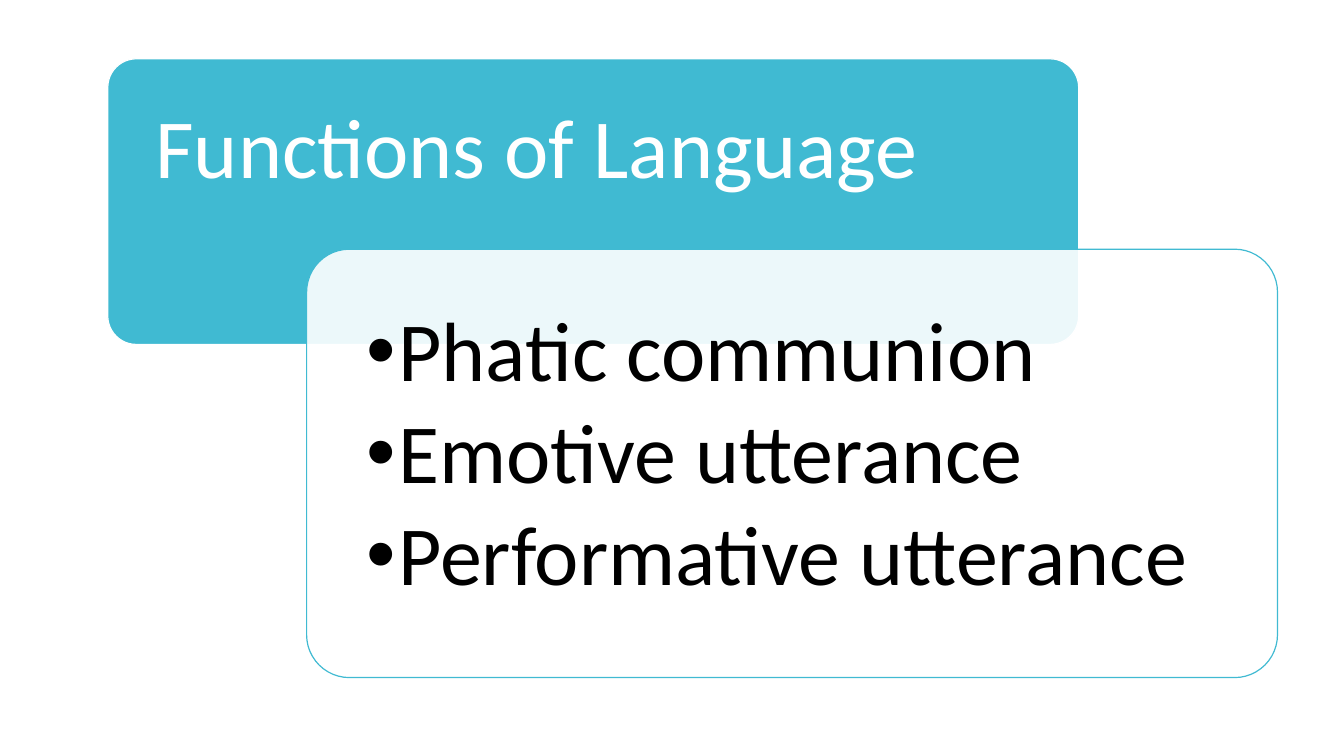
import pptx
import pptx.util
import pptx.dml.color
import pptx.enum.shapes
import pptx.enum.text
import pptx.oxml
import pptx.oxml.ns
import lxml.etree

Pt = pptx.util.Pt
RGBColor = pptx.dml.color.RGBColor
qn = pptx.oxml.ns.qn

TITLE = "Functions of Language"
FUNCTIONS = ["Phatic communion", "Emotive utterance", "Performative utterance"]

TEAL = RGBColor(0x40, 0xBA, 0xD2)
WHITE = RGBColor(0xFF, 0xFF, 0xFF)
BLACK = RGBColor(0, 0, 0)

CARD = (77, 42, 693.5, 204)
PANEL = (219, 178, 693.5, 306)
PANEL_PAD = 9
INSET = 34
TITLE_BOTTOM_INSET = 18
BULLET_INDENT = 22.5


def place(sp, left, top, width, height):
    sp.left, sp.top, sp.width, sp.height = Pt(left), Pt(top), Pt(width), Pt(height)


def add_card(s, box, fill, line, opacity=100):
    sp = s.shapes.add_shape(pptx.enum.shapes.MSO_SHAPE.ROUNDED_RECTANGLE, *map(Pt, box))
    sp.adjustments[0] = 0.1
    sp.shadow.inherit = False
    sp.fill.solid()
    sp.fill.fore_color.rgb = fill
    sp.line.color.rgb = line
    sp.line.width = Pt(0.85)
    if opacity < 100:
        color = sp.fill._xPr.find(qn("a:solidFill"))[0]
        lxml.etree.SubElement(color, qn("a:alpha")).set("val", str(opacity * 1000))


def write(p, text, color, size=60, font="Calibri", after=0, bullet=False):
    p.alignment = pptx.enum.text.PP_ALIGN.LEFT
    p.line_spacing = 0.9
    p.space_before = Pt(0)
    p.space_after = Pt(after)
    if bullet:
        pPr = p._p.get_or_add_pPr()
        pPr.set("marL", str(Pt(BULLET_INDENT)))
        pPr.set("indent", str(-Pt(BULLET_INDENT)))
        lxml.etree.SubElement(pPr, qn("a:buChar")).set("char", "•")
    r = p.add_run()
    r.text = text
    r.font.size = Pt(size)
    r.font.name = font
    r.font.color.rgb = color


def set_frame(sp, bottom):
    tf = sp.text_frame
    tf.word_wrap = True
    tf.auto_size = pptx.enum.text.MSO_AUTO_SIZE.NONE
    tf.vertical_anchor = pptx.enum.text.MSO_ANCHOR.TOP
    tf.margin_left = tf.margin_top = tf.margin_right = Pt(INSET)
    tf.margin_bottom = Pt(bottom)
    return tf


prs = pptx.Presentation()
prs.slide_width, prs.slide_height = Pt(960), Pt(540)
s = prs.slides.add_slide(prs.slide_layouts[1])
title, body = s.shapes.title, s.placeholders[1]
tree = s.shapes._spTree

add_card(s, CARD, TEAL, WHITE)
tree.append(title._element)
left, top, width, height = CARD
place(title, left, top, width, PANEL[1] - top)
write(set_frame(title, TITLE_BOTTOM_INSET).paragraphs[0], TITLE, WHITE)

add_card(s, PANEL, WHITE, TEAL, opacity=90)
tree.append(body._element)
left, top, width, height = PANEL
place(body, left + PANEL_PAD, top + PANEL_PAD, width - 2 * PANEL_PAD, height - 2 * PANEL_PAD)
tf = set_frame(body, INSET)
for i, name in enumerate(FUNCTIONS):
    p = tf.add_paragraph() if i else tf.paragraphs[0]
    write(p, name, BLACK, after=8, bullet=True)

prs.save("out.pptx")
